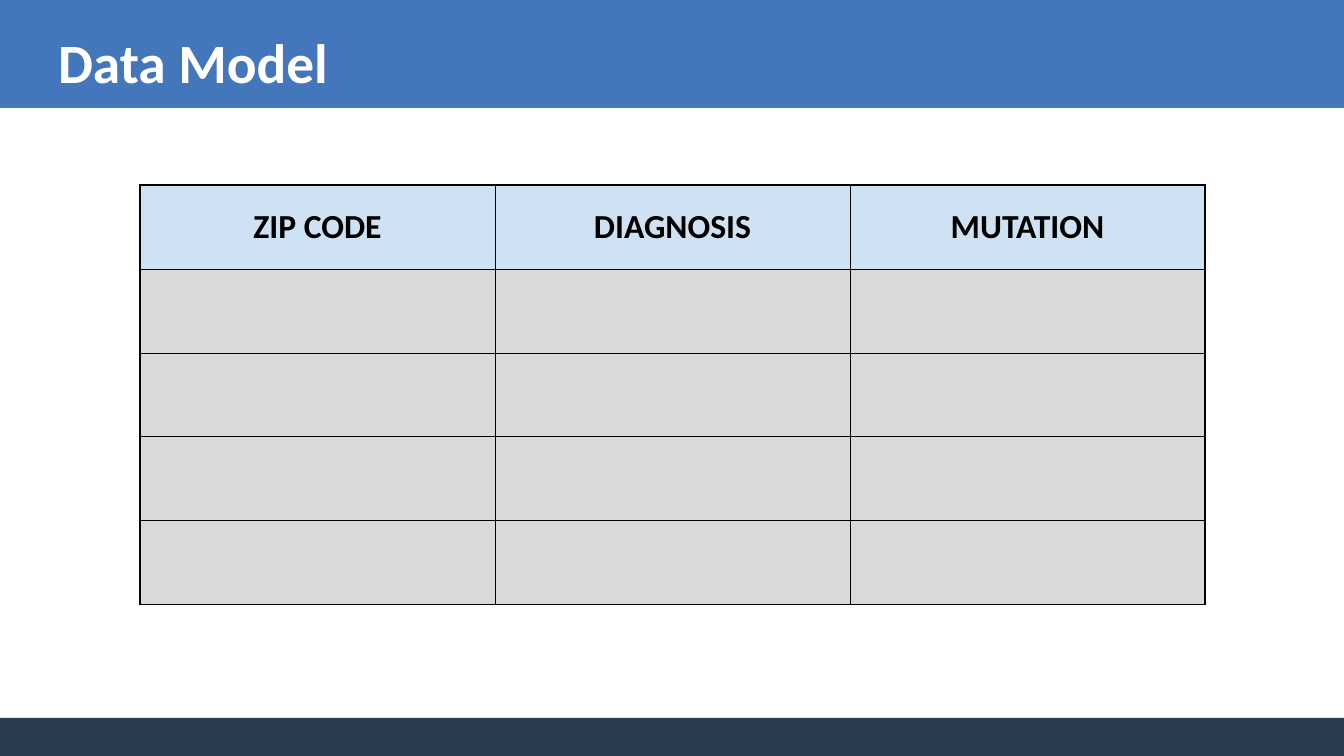
from dataclasses import dataclass

from lxml.etree import SubElement
from pptx import Presentation
from pptx.dml.color import RGBColor as RGB
from pptx.enum.shapes import MSO_SHAPE as SHAPE
from pptx.enum.text import MSO_ANCHOR as ANCHOR, MSO_AUTO_SIZE as AUTO, PP_ALIGN as ALIGN
from pptx.oxml.ns import qn
from pptx.util import Emu, Pt

TITLE = "Data Model"
HEADERS = ["ZIP CODE", "DIAGNOSIS", "MUTATION"]
EMPTY_ROWS = 4


@dataclass(frozen=True)
class Theme:
    font: str = "Calibri"
    title_size: float = 39.6
    header_size: int = 24
    inner_line: float = 0.75
    outer_line: float = 1.5
    banner: str = "4376BB"
    footer: str = "2A3C4E"
    title: str = "FFFFFF"
    text: str = "000000"
    header: str = "CFE2F3"
    body: str = "D9D9D9"


THEME = Theme()
WIDTH, HEIGHT = 1344, 756
BANNER_H, FOOTER_H = 108, 38
TITLE_BOX = (45, 15, 1252, 85)
TABLE_X, TABLE_Y, COL_W, ROW_H = 140, 185, 355, 84
INSET = 13


def px(n):
    return Emu(round(n * 914400 / 100.8))


def set_text(tf, text, *, size, color, align=ALIGN.LEFT):
    p = tf.paragraphs[0]
    p.alignment = align
    r = p.add_run()
    r.text = text
    r.font.name, r.font.size, r.font.bold = THEME.font, Pt(size), True
    r.font.color.rgb = RGB.from_string(color)


def set_insets(box):
    box.margin_left = box.margin_right = box.margin_top = box.margin_bottom = px(INSET)


def add_bar(s, top, height, color):
    sp = s.shapes.add_shape(SHAPE.RECTANGLE, 0, px(top), px(WIDTH), px(height))
    sp.shadow.inherit = False
    sp.fill.solid()
    sp.fill.fore_color.rgb = RGB.from_string(color)
    sp.line.fill.background()


def set_borders(cell, widths):
    """Insert left, right, top and bottom lines ahead of the cell's fill."""
    tc_pr = cell._tc.get_or_add_tcPr()
    for i, (side, width) in enumerate(zip("LRTB", widths)):
        ln = SubElement(tc_pr, qn(f"a:ln{side}"), w=str(Pt(width)))
        fill = SubElement(ln, qn("a:solidFill"))
        SubElement(fill, qn("a:srgbClr"), val=THEME.text)
        tc_pr.insert(i, ln)


def add_title(s):
    title = s.shapes.title
    title.left, title.top, title.width, title.height = map(px, TITLE_BOX)
    tf = title.text_frame
    tf.word_wrap, tf.auto_size, tf.vertical_anchor = True, AUTO.NONE, ANCHOR.TOP
    set_insets(tf)
    set_text(tf, TITLE, size=THEME.title_size, color=THEME.title)
    s.shapes._spTree.append(title._element)  # in front of the banner


def add_data_table(s):
    rows, cols = EMPTY_ROWS + 1, len(HEADERS)
    table = s.shapes.add_table(rows, cols, px(TABLE_X), px(TABLE_Y),
                               px(cols * COL_W), px(rows * ROW_H)).table
    table.horz_banding = False
    for col in table.columns:
        col.width = px(COL_W)
    for row in table.rows:
        row.height = px(ROW_H)
    for i in range(rows):
        for j in range(cols):
            cell = table.cell(i, j)
            cell.fill.solid()
            cell.fill.fore_color.rgb = RGB.from_string(THEME.body if i else THEME.header)
            cell.vertical_anchor = ANCHOR.MIDDLE
            set_insets(cell)
            outer = (j == 0, j == cols - 1, i == 0, False)
            set_borders(cell, [THEME.outer_line if o else THEME.inner_line for o in outer])
            if i == 0:
                set_text(cell.text_frame, HEADERS[j], size=THEME.header_size,
                         color=THEME.text, align=ALIGN.CENTER)


def main():
    prs = Presentation()
    prs.slide_width, prs.slide_height = px(WIDTH), px(HEIGHT)
    s = prs.slides.add_slide(prs.slide_layouts[5])
    add_bar(s, 0, BANNER_H, THEME.banner)
    add_bar(s, HEIGHT - FOOTER_H, FOOTER_H, THEME.footer)
    add_title(s)
    add_data_table(s)
    prs.save("out.pptx")


if __name__ == "__main__":
    main()
